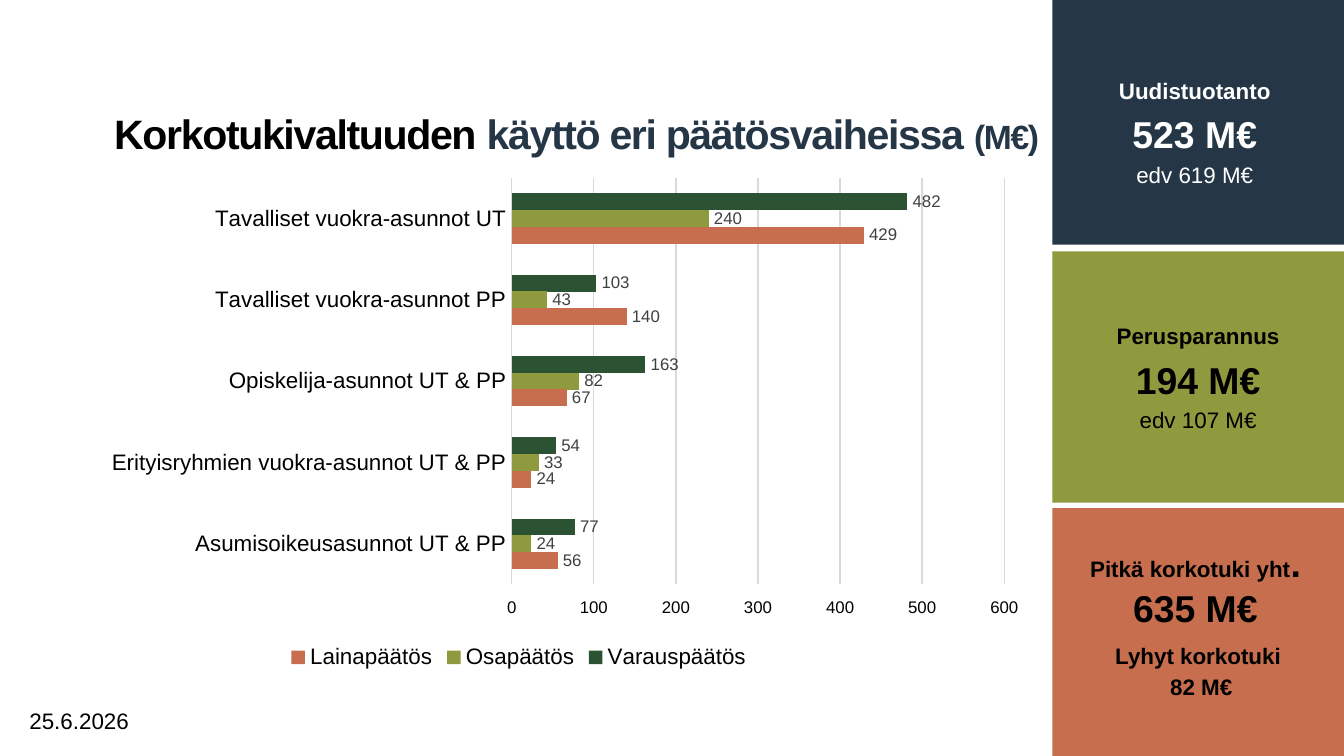
from typing import NamedTuple

from lxml.etree import SubElement
from pptx import Presentation
from pptx.chart.data import CategoryChartData
from pptx.dml.color import RGBColor
from pptx.enum.chart import (XL_CHART_TYPE, XL_LABEL_POSITION, XL_LEGEND_POSITION,
                             XL_TICK_LABEL_POSITION, XL_TICK_MARK)
from pptx.enum.shapes import MSO_SHAPE
from pptx.enum.text import MSO_ANCHOR, MSO_AUTO_SIZE, PP_ALIGN
from pptx.oxml import parse_xml
from pptx.oxml.ns import nsdecls, qn
from pptx.util import Inches, Pt

COLORS = {"navy": "253746", "olive": "8F993E", "rust": "C66E4E", "green": "2C5234",
          "black": "000000", "white": "FFFFFF", "grid": "D9D9D9", "label": "404040"}


class Run(NamedTuple):
    text: str
    size: float = 12
    bold: bool = True
    color: str = "black"


class Panel(NamedTuple):
    top: float
    height: float
    color: str


class Note(NamedTuple):
    box: tuple[float, float, float, float]
    inset: tuple[float, float]
    paragraphs: list[list[Run]]


class Series(NamedTuple):
    name: str
    values: tuple[int, ...]
    color: str


PANEL_LEFT, PANEL_WIDTH = 7.83, 2.17
PANELS = [Panel(0, 1.82, "navy"), Panel(1.87, 1.87, "olive"), Panel(3.78, 1.85, "rust")]

TITLE = [Run("Korkotukivaltuuden", 22), Run(" käyttö eri päätösvaiheissa ", 22, color="navy"),
         Run("(M€)", 18, color="navy")]

WIDE, TIGHT = (0.1, 0.05), (0.04, 0.04)
NOTES = [
    Note((8.07, 0.6, 1.64, 0.77), WIDE,
         [[Run("Uudistuotanto", color="white")], [Run("523 M€", 20, color="white")],
          [Run("edv 619 M€", bold=False, color="white")]]),
    Note((8.07, 2.34, 1.69, 0.94), WIDE,
         [[Run("Perusparannus")], [Run("194 M€", 20)], [Run("edv 107 M€", bold=False)]]),
    Note((8.05, 3.96, 1.69, 0.79), TIGHT,
         [[Run("Pitkä korkotuki yht"), Run(". 635 M€", 20)]]),
    Note((8.07, 4.6, 1.69, 0.79), TIGHT, [[Run("Lyhyt korkotuki")], [Run(" 82 M€")]]),
]

CATEGORIES = ["Tavalliset vuokra-asunnot UT", "Tavalliset vuokra-asunnot PP",
              "Opiskelija-asunnot UT & PP", "Erityisryhmien vuokra-asunnot UT & PP",
              "Asumisoikeusasunnot UT & PP"]
SERIES = [Series("Varauspäätös", (482, 103, 163, 54, 77), "green"),
          Series("Osapäätös", (240, 43, 82, 33, 24), "olive"),
          Series("Lainapäätös", (429, 140, 67, 24, 56), "rust")]
PLOT = {"x": 0.493, "y": 0.04, "w": 0.49, "h": 0.786}


def rgb(name: str) -> RGBColor:
    return RGBColor.from_string(COLORS[name])


def set_font(font, size: float, color: str = "black", bold: bool = False) -> None:
    font.name, font.size, font.bold = "Arial", Pt(size), bold
    font.color.rgb = rgb(color)


def place(sp, box: tuple[float, float, float, float]) -> None:
    sp.left, sp.top, sp.width, sp.height = (Inches(v) for v in box)


def add_run(p, run: Run):
    r = p.add_run()
    r.text = run.text
    set_font(r.font, run.size, run.color, run.bold)
    return r


def add_panel(s, panel: Panel, depth: int) -> None:
    sp = s.shapes.add_shape(MSO_SHAPE.RECTANGLE, Inches(PANEL_LEFT), Inches(panel.top),
                            Inches(PANEL_WIDTH), Inches(panel.height))
    sp.shadow.inherit = False
    sp.fill.solid()
    sp.fill.fore_color.rgb = rgb(panel.color)
    sp.line.fill.background()
    s.shapes.element.insert(2 + depth, sp.element)  # behind the placeholders


def fill_title(sp) -> None:
    place(sp, (0.75, 0.8, 7.09, 0.38))
    tf = sp.text_frame
    tf.auto_size, tf.vertical_anchor = MSO_AUTO_SIZE.NONE, MSO_ANCHOR.MIDDLE
    p = tf.paragraphs[0]
    p.alignment = PP_ALIGN.LEFT
    for run in TITLE:
        add_run(p, run).font._element.set("spc", "-70")


def fill_note(sp, note: Note) -> None:
    place(sp, note.box)
    tf = sp.text_frame
    tf.word_wrap, tf.auto_size = True, MSO_AUTO_SIZE.NONE
    tf.vertical_anchor = MSO_ANCHOR.MIDDLE
    tf.margin_left = tf.margin_right = Inches(note.inset[0])
    tf.margin_top = tf.margin_bottom = Inches(note.inset[1])
    for i, runs in enumerate(note.paragraphs):
        p = tf.add_paragraph() if i else tf.paragraphs[0]
        p.alignment = PP_ALIGN.CENTER
        if i == 0:
            p.space_before = Pt(0)
        pPr = p._p.get_or_add_pPr()
        pPr.set("marL", "0")
        pPr.set("indent", "0")
        SubElement(pPr, qn("a:buNone"))
        for run in runs:
            add_run(p, run)


def add_date(s) -> None:
    sp = s.shapes.add_textbox(Inches(0.12), Inches(5.21), Inches(1.75), Inches(0.25))
    sp.text_frame.word_wrap = True
    add_run(sp.text_frame.paragraphs[0], Run("25.6.2026", bold=False))


def add_bar_chart(s) -> None:
    data = CategoryChartData(number_format="#,##0")
    data.categories = CATEGORIES
    for series in SERIES:
        data.add_series(series.name, series.values)
    chart = s.shapes.add_chart(XL_CHART_TYPE.BAR_CLUSTERED, Inches(0.12), Inches(1.17),
                               Inches(7.48), Inches(3.85), data).chart
    set_font(chart.font, 10)
    chart.has_title = False
    chart.has_legend = True
    chart.legend.position = XL_LEGEND_POSITION.BOTTOM
    chart.legend.include_in_layout = False
    set_font(chart.legend.font, 12)

    # Bars and their values
    plot = chart.plots[0]
    plot.gap_width, plot.overlap, plot.vary_by_categories = 182, 1, False
    for bars, series in zip(plot.series, SERIES):
        bars.format.fill.solid()
        bars.format.fill.fore_color.rgb = rgb(series.color)
        labels = bars.data_labels
        labels.show_value = True
        labels.position = XL_LABEL_POSITION.OUTSIDE_END
        labels.number_format, labels.number_format_is_linked = "#,##0", False
        set_font(labels.font, 9, "label")

    # Axes: categories run downwards, value labels stay at the bottom
    cat, val = chart.category_axis, chart.value_axis
    for axis, size in ((cat, 12), (val, 9)):
        axis.major_tick_mark = axis.minor_tick_mark = XL_TICK_MARK.NONE
        set_font(axis.tick_labels.font, size)
    cat.reverse_order = True
    val.tick_label_position = XL_TICK_LABEL_POSITION.HIGH
    val.minimum_scale, val.maximum_scale, val.major_unit = 0, 600, 100
    val.tick_labels.number_format = "#,##0"
    val.tick_labels.number_format_is_linked = False
    val.format.line.fill.background()
    for line in (cat.format.line, val.major_gridlines.format.line):
        line.color.rgb = rgb("grid")
        line.width = Pt(0.75)

    # Fixed inner plot area
    area = chart._chartSpace.chart.plotArea
    for old in area.findall(qn("c:layout")):
        area.remove(old)
    modes = '<c:xMode val="edge"/><c:yMode val="edge"/>'
    sizes = "".join(f'<c:{key} val="{value}"/>' for key, value in PLOT.items())
    area.insert(0, parse_xml(
        f'<c:layout {nsdecls("c")}><c:manualLayout><c:layoutTarget val="inner"/>'
        f'{modes}{sizes}</c:manualLayout></c:layout>'))


def main() -> None:
    prs = Presentation()
    prs.slide_width = Inches(10)
    prs.slide_height = prs.slide_width * 9 // 16
    s = prs.slides.add_slide(prs.slide_layouts[4])  # title and four bodies
    title, *bodies = s.placeholders
    for depth, panel in enumerate(PANELS):
        add_panel(s, panel, depth)
    fill_title(title)
    for sp, note in zip(bodies, NOTES):
        fill_note(sp, note)
    add_date(s)
    add_bar_chart(s)
    prs.save("out.pptx")


if __name__ == "__main__":
    main()
